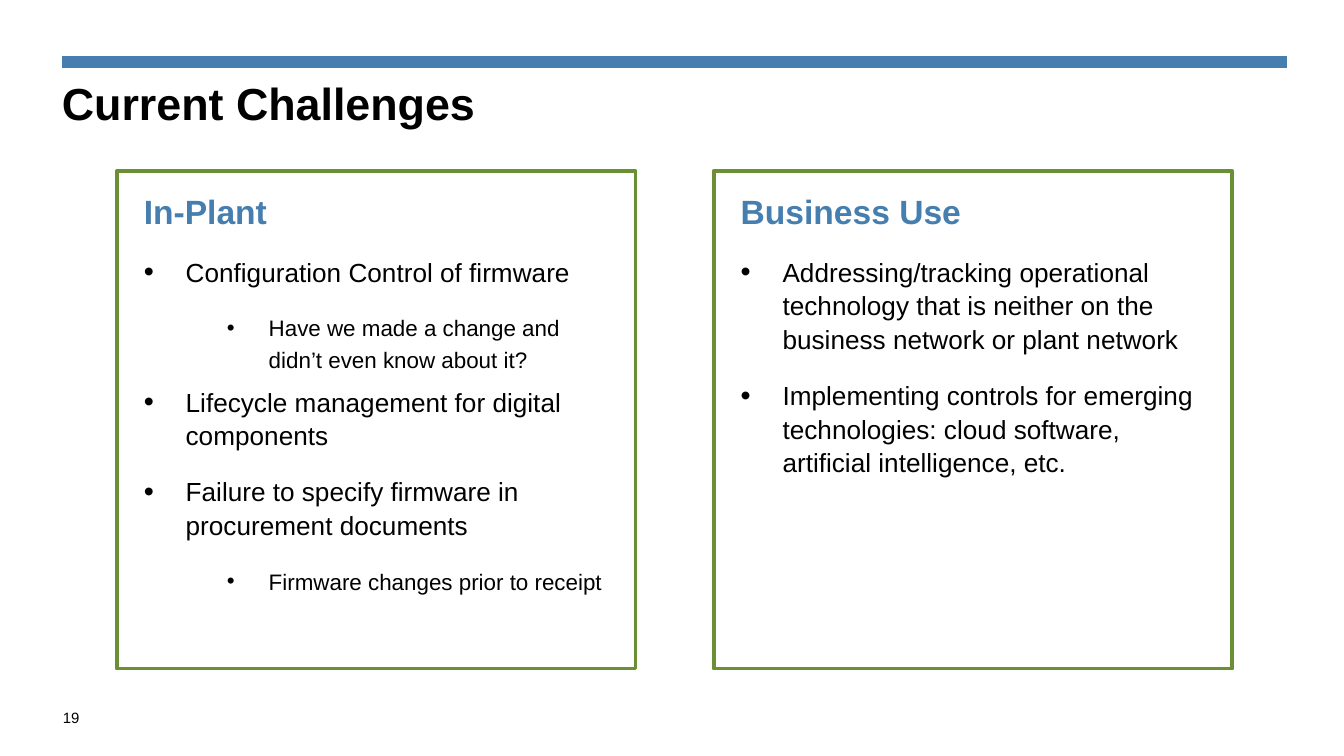
from lxml import etree
from pptx import Presentation
from pptx import util as u
from pptx.dml.color import RGBColor
from pptx.enum import shapes, text
from pptx.oxml import ns

BLUE, GREEN, BLACK, WHITE = "457EAF", "6A9033", "000000", "FFFFFF"

# Paragraph formats: spacing in points, indent and hang in centimetres
HEADING = {"size": 18, "color": BLUE, "bold": True, "line": 18, "after": 12}
BULLET = {"size": 14, "line": 18, "after": 12, "indent": 0.79, "bullet_size": 110}
SUB_BULLET = {"size": 12, "line": 16.8, "after": 6, "indent": 2.36,
              "bullet_size": 100, "level": 1}
HANG = 0.79

PANELS = [
    (2.21, [
        ("In-Plant", HEADING),
        ("Configuration Control of firmware", BULLET),
        ("Have we made a change and didn’t even know about it?", SUB_BULLET),
        ("Lifecycle management for digital components", BULLET),
        ("Failure to specify firmware in procurement documents", BULLET),
        ("Firmware changes prior to receipt", SUB_BULLET),
    ]),
    (13.49, [
        ("Business Use", HEADING),
        ("Addressing/tracking operational technology that is neither on the "
         "business network or plant network", BULLET),
        ("Implementing controls for emerging technologies: cloud software, "
         "artificial intelligence, etc.", BULLET),
    ]),
]


def rgb(value):
    return RGBColor.from_string(value)


def set_attributes(target, values):
    for name, value in values.items():
        setattr(target, name, value)


def set_frame(frame, margins, anchor):
    sides = ("left", "top", "right", "bottom")
    values = {f"margin_{side}": u.Cm(size) for side, size in zip(sides, margins)}
    set_attributes(frame, {"word_wrap": True, "vertical_anchor": anchor, **values})


def add_bullet(paragraph, indent, size):
    properties = paragraph._p.get_or_add_pPr()
    properties.set("marL", str(u.Cm(indent)))
    properties.set("indent", str(-u.Cm(HANG)))
    color = etree.SubElement(properties, ns.qn("a:buClr"))
    etree.SubElement(color, ns.qn("a:srgbClr"), val=BLACK)
    etree.SubElement(properties, ns.qn("a:buSzPct"), val=str(size * 1000))
    etree.SubElement(properties, ns.qn("a:buFont"), typeface="Arial")
    etree.SubElement(properties, ns.qn("a:buChar"), char="•")


def write_paragraph(paragraph, words, style):
    if "indent" in style:
        add_bullet(paragraph, style["indent"], style["bullet_size"])
    values = {"alignment": text.PP_ALIGN.LEFT, "level": style.get("level", 0),
              "space_before": u.Pt(0), "space_after": u.Pt(style.get("after", 0))}
    if "line" in style:
        values["line_spacing"] = u.Pt(style["line"])
    set_attributes(paragraph, values)
    run = paragraph.add_run()
    run.text = words
    set_attributes(run.font, {"name": "Arial", "size": u.Pt(style["size"]),
                              "bold": style.get("bold", False)})
    run.font.color.rgb = rgb(style.get("color", BLACK))


def add_label(slide, box, words, style, margins, anchor):
    label = slide.shapes.add_textbox(*map(u.Cm, box))
    set_frame(label.text_frame, margins, anchor)
    write_paragraph(label.text_frame.paragraphs[0], words, style)
    return label


def add_rule(slide, left, right, y, width):
    rule = slide.shapes.add_connector(shapes.MSO_CONNECTOR.STRAIGHT,
                                      u.Cm(left), u.Cm(y), u.Cm(right), u.Cm(y))
    rule.line.width = u.Pt(width)
    rule.line.color.rgb = rgb(BLUE)
    etree.SubElement(rule._element.spPr, ns.qn("a:effectLst"))


def add_panel(slide, left, items):
    panel = slide.shapes.add_shape(shapes.MSO_SHAPE.RECTANGLE, u.Cm(left),
                                   u.Cm(3.23), u.Cm(9.8), u.Cm(9.4))
    panel.shadow.inherit = False
    panel.fill.solid()
    panel.fill.fore_color.rgb = rgb(WHITE)
    panel.line.width = u.Pt(2)
    panel.line.color.rgb = rgb(GREEN)
    frame = panel.text_frame
    set_frame(frame, [0.51] * 4, text.MSO_ANCHOR.TOP)
    for index, (words, style) in enumerate(items):
        paragraph = frame.add_paragraph() if index else frame.paragraphs[0]
        write_paragraph(paragraph, words, style)


def main():
    presentation = Presentation()
    set_attributes(presentation, {"slide_width": u.Cm(25.4), "slide_height": u.Cm(14.28)})
    slide = presentation.slides.add_slide(presentation.slide_layouts[6])

    # Header rule and title
    add_rule(slide, 1.17, 24.33, 1.17, 6.25)
    title = add_label(slide, (1.17, 1.55, 23.19, 1.4), "Current Challenges",
                      {"size": 24, "bold": True}, (0, 0, 0.25, 0.13), text.MSO_ANCHOR.TOP)
    title.text_frame.paragraphs[0].line_spacing = 0.9

    # Page number
    add_label(slide, (1.19, 13.23, 1.02, 0.64), "19", {"size": 8},
              (0, 0.13, 0, 0.13), text.MSO_ANCHOR.MIDDLE)

    # Challenge panels
    for left, items in PANELS:
        add_panel(slide, left, items)

    presentation.save("out.pptx")


if __name__ == "__main__":
    main()
